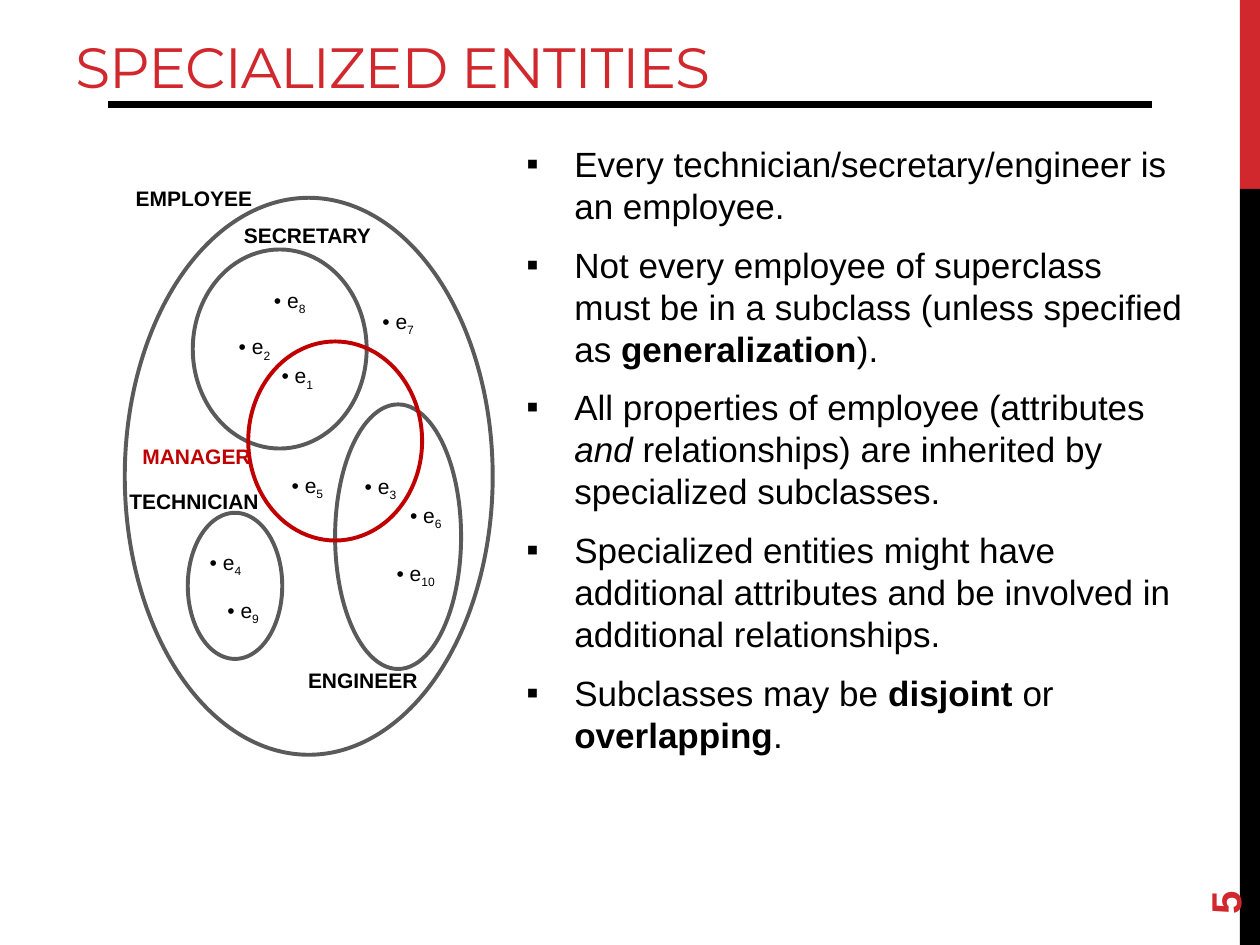
from lxml import etree
from pptx import Presentation
from pptx.dml.color import RGBColor
from pptx.enum.shapes import MSO_CONNECTOR, MSO_SHAPE
from pptx.enum.text import MSO_ANCHOR, PP_ALIGN
from pptx.oxml.ns import qn
from pptx.util import Inches, Pt

RECT, OVAL = MSO_SHAPE.RECTANGLE, MSO_SHAPE.OVAL
LINE = MSO_CONNECTOR.STRAIGHT
LEFT, MID = PP_ALIGN.LEFT, PP_ALIGN.CENTER
TOP, CENTER, LOW = MSO_ANCHOR.TOP, MSO_ANCHOR.MIDDLE, MSO_ANCHOR.BOTTOM
HUES = {"red": "D1282E", "black": "000000", "gray": "5A5A5A", "dark": "C00000"}

deck = Presentation()
deck.slide_width, deck.slide_height = Inches(10), Inches(7.5)
slide = deck.slides.add_slide(deck.slide_layouts[6])
shapes = slide.shapes

# A grid of 100 columns by 75 rows
COL, ROW = deck.slide_width / 100, deck.slide_height / 75


def grid(x, y, wide, high):
    """Turn columns and rows into slide lengths."""
    return [round(n) for n in (x * COL, y * ROW, wide * COL, high * ROW)]


def write(area, paras, size=12, hue="black", face="Arial", bold=False,
          align=LEFT, anchor=TOP, wrap=True, pad=True, mark=None, track=None):
    """Add a text box; each paragraph is a list of (text, style) runs."""
    box = shapes.add_textbox(*grid(*area))
    frame = box.text_frame
    frame.word_wrap, frame.vertical_anchor = wrap, anchor
    if not pad:
        frame.margin_left = frame.margin_right = 0
        frame.margin_top = frame.margin_bottom = 0
    for i, runs in enumerate(paras):
        para = frame.add_paragraph() if i else frame.paragraphs[0]
        para.alignment = align
        if mark:
            para.space_before = para.space_after = Pt(4.8)
            para.line_spacing = Pt(24)
            props = para._p.get_or_add_pPr()
            props.set("marL", str(Inches(0.38)))
            props.set("indent", str(-Inches(0.38)))
            etree.SubElement(props, qn("a:buFont")).set("typeface", "Arial")
            etree.SubElement(props, qn("a:buChar")).set("char", mark)
        for text, style in runs:
            run = para.add_run()
            run.text = text
            font = run.font
            font.name, font.size = face, Pt(size)
            font.bold, font.italic = bold or style == "bold", style == "italic"
            font.color.rgb = RGBColor.from_string(HUES[hue])
            if style == "sub":
                run._r.get_or_add_rPr().set("baseline", "-25000")
            if track:
                run._r.get_or_add_rPr().set("spc", str(track))
    return box


# Side bars and title rule
for y, high, hue in [(0, 15, "red"), (15, 60, "black")]:
    bar = shapes.add_shape(RECT, *grid(98.4, y, 1.6, high))
    bar.shadow.inherit = False
    bar.fill.solid()
    bar.fill.fore_color.rgb = RGBColor.from_string(HUES[hue])
    bar.line.fill.background()

rule = shapes.add_connector(LINE, *grid(8.6, 8.3, 91.4, 8.3))
rule.line.width = Pt(4)
rule.line.color.rgb = RGBColor.from_string(HUES["black"])
etree.SubElement(rule._element.spPr, qn("a:effectLst"))

write((5, 1.7, 93.3, 6.7), [[("SPECIALIZED ENTITIES", "")]], size=32.4,
      hue="red", face="Montserrat", anchor=LOW, track=-60)

# Entity sets: outline area, hue, name, name position
sets = [
    ((9.9, 15.7, 29.2, 44.2), "gray", "EMPLOYEE", 9.2, 14.2),
    ((15.3, 19.8, 13.8, 15.8), "gray", "SECRETARY", 18.2, 17.2),
    ((26.6, 32.1, 10, 21), "gray", "ENGINEER", 22.6, 52.5),
    ((14.9, 40.7, 7.5, 11.6), "gray", "TECHNICIAN", 9.2, 38.3),
    ((19.7, 27.1, 13.8, 15.8), "dark", "MANAGER", 9.4, 34.7),
]
for area, hue, name, x, y in sets:
    ring = shapes.add_shape(OVAL, *grid(*area))
    ring.shadow.inherit = False
    ring.fill.background()
    ring.line.width = Pt(2.25)
    ring.line.color.rgb = RGBColor.from_string(HUES[hue])
    write((x, y, 12.4, 3), [[(name, "")]], bold=True, align=MID,
          hue="dark" if hue == "dark" else "black")

# Members of the sets: number, left, top
members = [
    (8, 21.6, 22.8), (2, 18.8, 26.5), (1, 22.2, 28.8), (7, 30.2, 24.5),
    (4, 16.5, 43.6), (3, 28.8, 37.6), (6, 32.4, 39.9), (5, 23, 37.5),
    (10, 31.3, 44.5), (9, 17.9, 47.4),
]
for num, x, y in members:
    write((x, y, 3.4 if num > 9 else 2.8, 2), [[("• e", ""), (str(num), "sub")]],
          align=MID, wrap=False, pad=False)

points = [
    [("Every technician/secretary/engineer is an employee.", "")],
    [("Not every employee of superclass must be in a subclass "
      "(unless specified as ", ""), ("generalization", "bold"), (").", "")],
    [("All properties of employee (attributes ", ""), ("and", "italic"),
     (" relationships) are inherited by specialized subclasses.", "")],
    [("Specialized entities might have additional attributes and be "
      "involved in additional relationships.", "")],
    [("Subclasses may be ", ""), ("disjoint", "bold"), (" or ", ""),
     ("overlapping", "bold"), (".", "")],
]
write((40.8, 10.8, 54.2, 54.5), points, size=20, mark="▪")

page = write((90, 64.4, 14.4, 4), [[("5", "")]], size=24, hue="red",
             bold=True, anchor=CENTER)
page.rotation = 270

deck.save("out.pptx")
